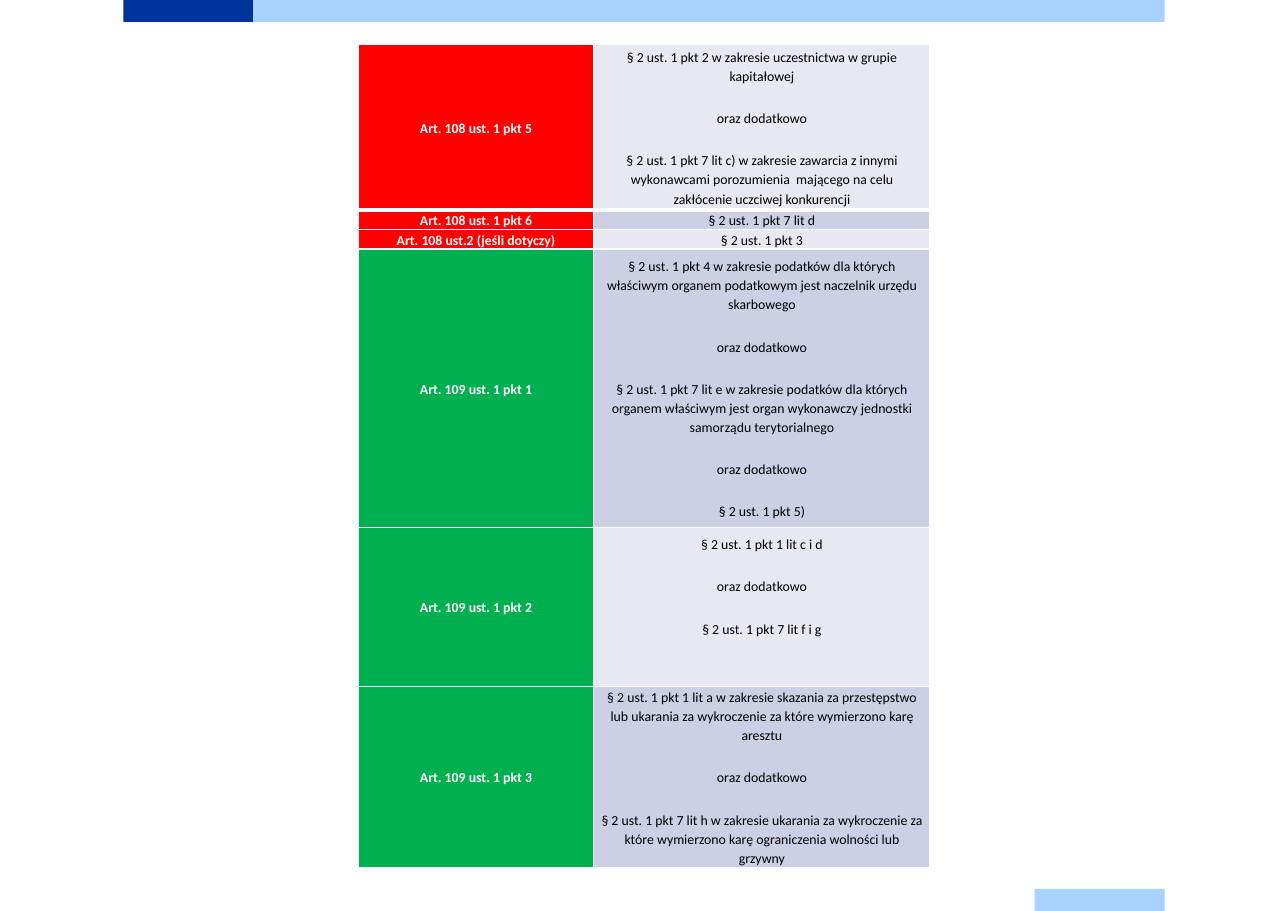
from lxml.etree import SubElement
from pptx import Presentation
from pptx.dml.color import RGBColor
from pptx.enum.shapes import MSO_SHAPE
from pptx.enum.text import MSO_ANCHOR, PP_ALIGN
from pptx.oxml.ns import qn
from pptx.util import Inches, Pt

NAVY = RGBColor(0x00, 0x33, 0x99)
SKY = RGBColor(0xA6, 0xD3, 0xFF)
RED = RGBColor(0xFF, 0x00, 0x00)
GREEN = RGBColor(0x00, 0xB0, 0x50)
PALE = RGBColor(0xE7, 0xE9, 0xF2)
LILAC = RGBColor(0xCC, 0xD0, 0xE4)
WHITE = RGBColor(0xFF, 0xFF, 0xFF)
BLACK = RGBColor(0x00, 0x00, 0x00)

ALSO = "oraz dodatkowo"

# Article, its colour, row height, bottom margin, matching provisions
ROWS = [
    ("Art. 108 ust. 1 pkt 5", RED, 1.51, 0, [
        "§ 2 ust. 1 pkt 2 w zakresie uczestnictwa w grupie kapitałowej",
        ALSO,
        "§ 2 ust. 1 pkt 7 lit c) w zakresie zawarcia z innymi wykonawcami "
        "porozumienia  mającego na celu zakłócenie uczciwej konkurencji"]),
    ("Art. 108 ust. 1 pkt 6", RED, 0.17, 0, ["§ 2 ust. 1 pkt 7 lit d"]),
    ("Art. 108 ust.2 (jeśli dotyczy)", RED, 0.17, 0, ["§ 2 ust. 1 pkt 3"]),
    ("Art. 109 ust. 1 pkt 1", GREEN, 2.53, 0, [
        "§ 2 ust. 1 pkt 4 w zakresie podatków dla których właściwym organem "
        "podatkowym jest naczelnik urzędu skarbowego",
        ALSO,
        "§ 2 ust. 1 pkt 7 lit e w zakresie podatków dla których organem "
        "właściwym jest organ wykonawczy jednostki samorządu terytorialnego",
        ALSO,
        "§ 2 ust. 1 pkt 5)"]),
    ("Art. 109 ust. 1 pkt 2", GREEN, 1.44, 0.38, [
        "§ 2 ust. 1 pkt 1 lit c i d",
        ALSO,
        "§ 2 ust. 1 pkt 7 lit f i g"]),
    ("Art. 109 ust. 1 pkt 3", GREEN, 1.65, 0, [
        "§ 2 ust. 1 pkt 1 lit a w zakresie skazania za przestępstwo lub "
        "ukarania za wykroczenie za które wymierzono karę aresztu",
        ALSO,
        "§ 2 ust. 1 pkt 7 lit h w zakresie ukarania za wykroczenie za które "
        "wymierzono karę ograniczenia wolności lub grzywny"]),
]


def add_bar(slide, left, top, width, color):
    bar = slide.shapes.add_shape(MSO_SHAPE.RECTANGLE, Inches(left), Inches(top),
                                 Inches(width), Inches(0.2))
    bar.shadow.inherit = False
    bar.fill.solid()
    bar.fill.fore_color.rgb = color
    bar.line.fill.background()


def set_edges(cell, top, bottom):
    props = cell._tc.get_or_add_tcPr()
    for tag, width in (("lnL", 1), ("lnR", 1), ("lnT", top), ("lnB", bottom)):
        edge = SubElement(props, qn(f"a:{tag}"), w=str(Pt(width)))
        fill = SubElement(edge, qn("a:solidFill"))
        SubElement(fill, qn("a:srgbClr"), val=str(WHITE))


def fill_cell(cell, lines, fill, color, bold=False, foot=0):
    cell.fill.solid()
    cell.fill.fore_color.rgb = fill
    cell.vertical_anchor = MSO_ANCHOR.MIDDLE
    cell.margin_left = cell.margin_right = Inches(0.06)
    cell.margin_top = 0
    cell.margin_bottom = Inches(foot)
    frame = cell.text_frame
    frame.text = "\n".join(lines)
    for i, para in enumerate(frame.paragraphs):
        para.alignment = PP_ALIGN.CENTER
        para.line_spacing = 1.15
        if i:
            para.space_before = Pt(15)
        para.font.name = "Calibri"
        para.font.size = Pt(9)
        para.font.bold = bold
        para.font.color.rgb = color


def add_grid(slide):
    total = sum(row[2] for row in ROWS)
    table = slide.shapes.add_table(len(ROWS), 2, Inches(3.25), Inches(0.4),
                                   Inches(5.19), Inches(total)).table
    table.first_row = table.horz_banding = False
    table.columns[0].width = Inches(2.14)
    table.columns[1].width = Inches(3.05)
    for i, (article, color, height, foot, lines) in enumerate(ROWS):
        table.rows[i].height = Inches(height)
        left, right = table.cell(i, 0), table.cell(i, 1)
        # A thick rule parts the first row from the rest
        for cell in (left, right):
            set_edges(cell, 3 if i == 1 else 1, 3 if i == 0 else 1)
        fill_cell(left, [article], color, WHITE, bold=True)
        fill_cell(right, lines, LILAC if i % 2 else PALE, BLACK, foot=foot)


def main():
    deck = Presentation()
    deck.slide_width, deck.slide_height = Inches(11.69), Inches(8.27)
    slide = deck.slides.add_slide(deck.slide_layouts[6])

    # Bars at the page edges
    add_bar(slide, 1.12, 0, 1.18, NAVY)
    add_bar(slide, 2.3, 0, 8.27, SKY)
    add_bar(slide, 9.39, 8.07, 1.18, SKY)

    # Table of articles and provisions
    add_grid(slide)
    deck.save("out.pptx")


if __name__ == "__main__":
    main()
